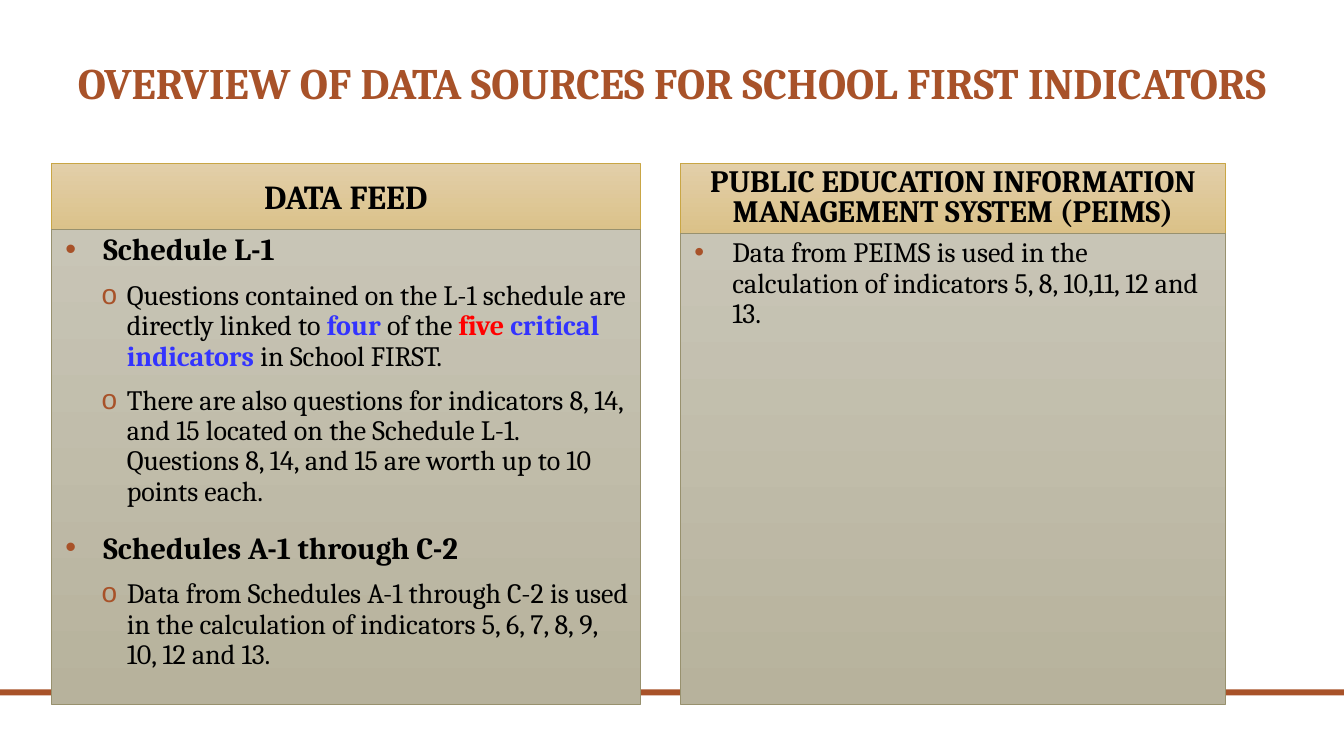
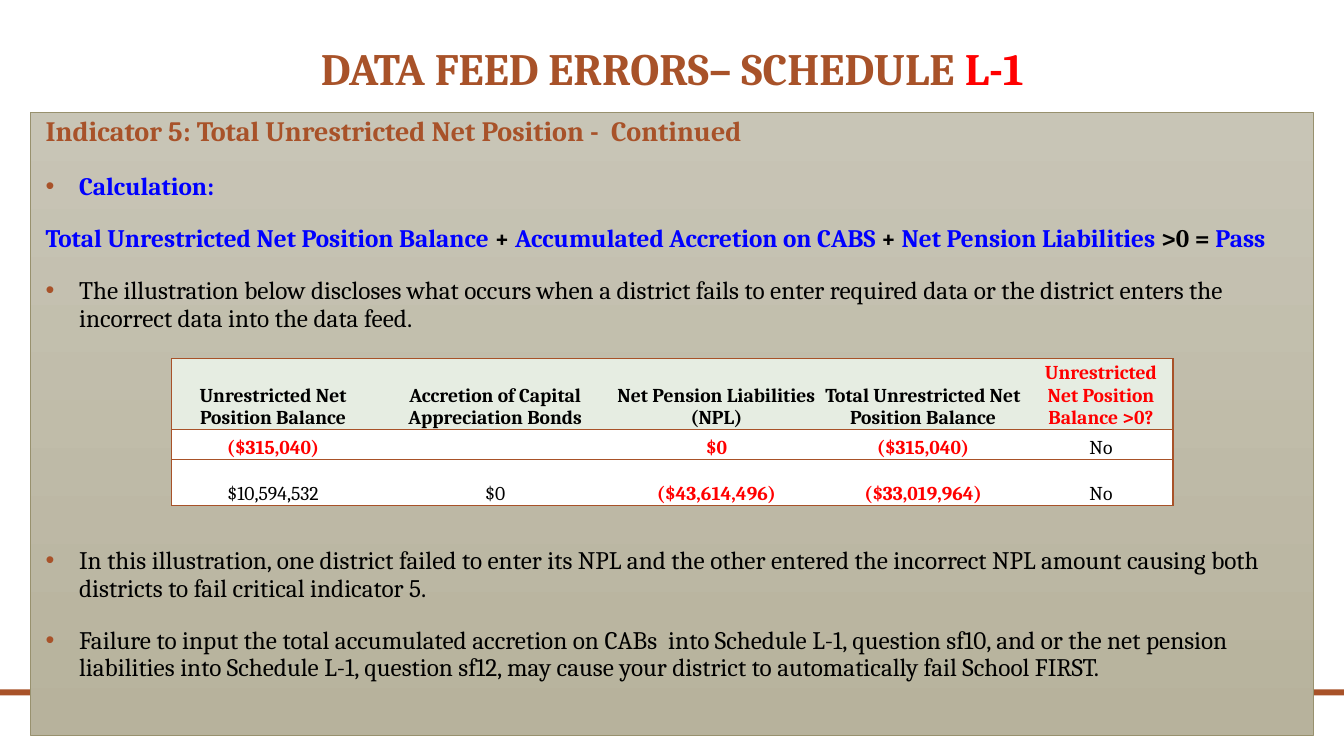
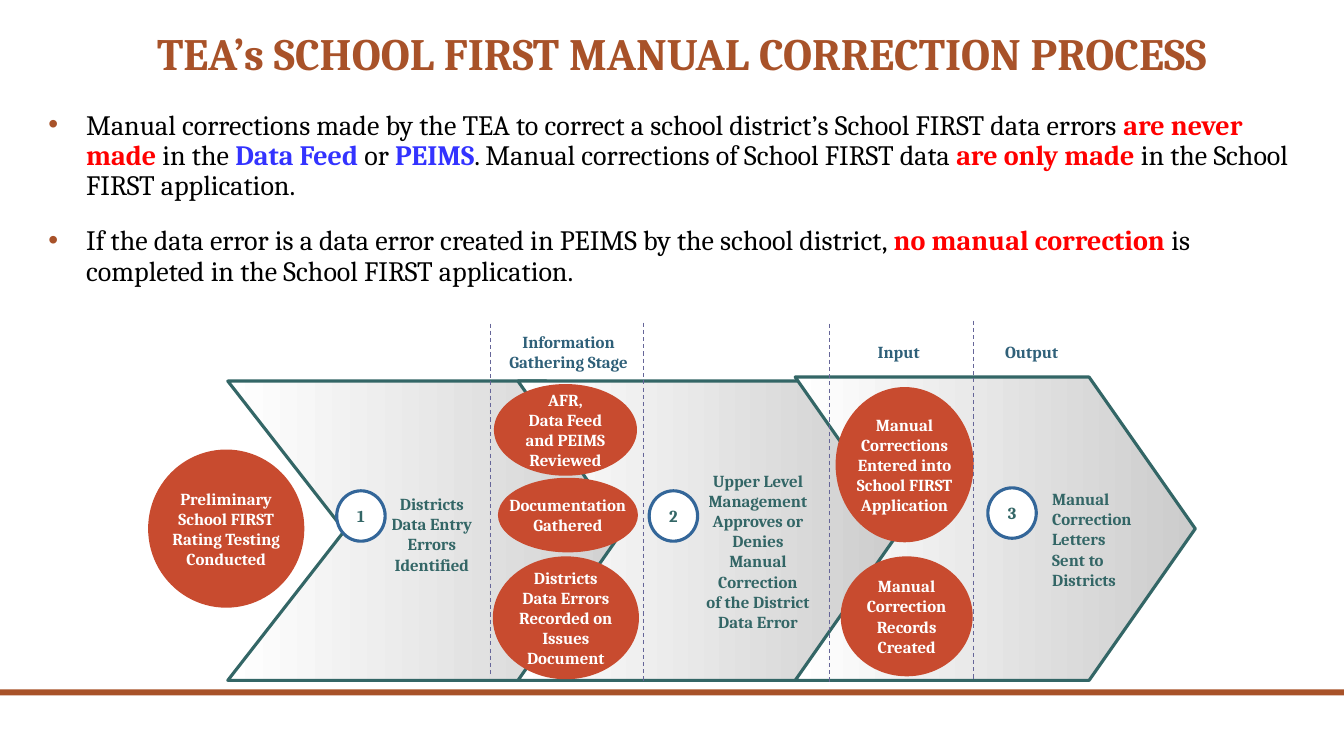
from dataclasses import dataclass

from lxml import etree
from pptx import Presentation
from pptx.dml.color import RGBColor
from pptx.enum.dml import MSO_LINE
from pptx.enum.shapes import MSO_CONNECTOR, MSO_SHAPE as SHAPE
from pptx.enum.text import MSO_ANCHOR as ANCHOR, PP_ALIGN as ALIGN
from pptx.oxml.ns import qn
from pptx.util import Pt

FONT = "Cambria"
RUST, RED, BLUE, PURE_BLUE = "A85229", "FF0000", "3333FF", "0000FF"
BLACK, WHITE, TEAL, STEEL = "000000", "FFFFFF", "336666", "2F6079"
ORANGE, RING, DASHED, HEAD_ROW = "C84B2F", "336699", "666699", "E6EDE2"
TAN, TAN_LINE = ("E2CFA9", "DBC188"), "C9A645"
STONE, STONE_LINE = ("C8C5B6", "B7B29C"), "98916E"
SILVER = ("FFFFFF", "CCCCCC")
DOWN, ACROSS = 270, 0


def rgb(color):
    return RGBColor.from_string(color)


def sub(parent, tag, **attributes):
    return etree.SubElement(parent, qn(tag), attributes)


@dataclass
class Para:
    """A paragraph; a run is plain text or a bold (text, color) pair."""
    runs: list
    size: float = 20
    bold: bool = False
    color: str = BLACK
    bullet: str = "•"
    left: float = 30
    hang: float = 27
    before: float = 18
    spacing: float = 0.9
    align: ALIGN = ALIGN.LEFT


def centred(*runs, size, color=BLACK, spacing=0.9):
    return Para(list(runs), size, True, color, "", 0, 0, 0, spacing, ALIGN.CENTER)


def sub_point(*runs):
    return Para(list(runs), bullet="o", left=46.8, hang=18, before=10)


def note(*runs, **style):
    return Para(list(runs), **{"size": 18, "left": 27.4, "hang": 23.8, **style})


class Deck:
    def __init__(self):
        self.prs = Presentation()
        self.prs.slide_width, self.prs.slide_height = Pt(960), Pt(540)
        self.shapes = None

    def new_slide(self, box, *title, size=32, anchor=ANCHOR.MIDDLE):
        self.shapes = self.prs.slides.add_slide(self.prs.slide_layouts[6]).shapes
        self.shape(SHAPE.RECTANGLE, (0, 492.5, 960, 4.3), RUST)
        self.text(box, [centred(*title, size=size, color=RUST)], anchor)

    def shape(self, kind, box, fill, line=None, width=0.5, angle=DOWN):
        """Draw a preset shape; a pair of fill colors makes a gradient."""
        shape = self.shapes.add_shape(kind, *map(Pt, box))
        shape.shadow.inherit = False
        if isinstance(fill, tuple):
            shape.fill.gradient()
            shape.fill.gradient_angle = angle
            for stop, color, position in zip(shape.fill.gradient_stops, fill, (0, 1)):
                stop.color.rgb, stop.position = rgb(color), position
        else:
            shape.fill.solid()
            shape.fill.fore_color.rgb = rgb(fill)
        if line:
            shape.line.color.rgb, shape.line.width = rgb(line), Pt(width)
        else:
            shape.line.fill.background()
        return shape

    def fill_frame(self, frame, paras, anchor):
        frame.word_wrap, frame.vertical_anchor = True, anchor
        for i, para in enumerate(paras):
            paragraph = frame.add_paragraph() if i else frame.paragraphs[0]
            paragraph.alignment, paragraph.line_spacing = para.align, para.spacing
            paragraph.space_before = Pt(para.before if i else 0)
            props = paragraph._p.get_or_add_pPr()
            props.set("marL", str(Pt(para.left)))
            props.set("indent", str(Pt(-para.hang)))
            if para.bullet:
                sub(sub(props, "a:buClr"), "a:srgbClr", val=RUST)
                sub(props, "a:buFont", typeface="Arial")
                sub(props, "a:buChar", char=para.bullet)
            for item in para.runs:
                plain = isinstance(item, str)
                words, color = (item, para.color) if plain else item
                run = paragraph.add_run()
                run.text = words
                self.style(run.font, para.size, color, para.bold or not plain)

    def style(self, font, size, color, bold=True):
        font.name, font.size, font.bold = FONT, Pt(size), bold
        font.color.rgb = rgb(color)

    def text(self, box, paras, anchor=ANCHOR.TOP):
        self.fill_frame(self.shapes.add_textbox(*map(Pt, box)).text_frame, paras, anchor)

    def panel(self, box, paras, fill=STONE, line=STONE_LINE, anchor=ANCHOR.TOP):
        panel = self.shape(SHAPE.RECTANGLE, box, fill, line)
        self.fill_frame(panel.text_frame, paras, anchor)

    def small_text(self, frame, words, color, align, wrap, anchor):
        frame.text, frame.word_wrap, frame.vertical_anchor = words, wrap, anchor
        for paragraph in frame.paragraphs:
            paragraph.alignment = align
            for run in paragraph.runs:
                self.style(run.font, 12, color)

    def label(self, box, words, color=TEAL, align=ALIGN.CENTER, anchor=ANCHOR.TOP):
        frame = self.shapes.add_textbox(*map(Pt, box)).text_frame
        self.small_text(frame, words, color, align, True, anchor)

    def bubble(self, box, words, fill=ORANGE, line=None, color=WHITE):
        bubble = self.shape(SHAPE.OVAL, box, fill, line, 2.25)
        self.small_text(bubble.text_frame, words, color, ALIGN.CENTER, False, ANCHOR.MIDDLE)

    def chevron(self, box, point):
        chevron = self.shape(SHAPE.CHEVRON, box, SILVER, TEAL, 2.25, ACROSS)
        chevron.adjustments[0] = point

    def divider(self, x, top, bottom):
        line = self.shapes.add_connector(
            MSO_CONNECTOR.STRAIGHT, Pt(x), Pt(top), Pt(x), Pt(bottom))
        line.line.color.rgb, line.line.width = rgb(DASHED), Pt(0.75)
        line.line.dash_style = MSO_LINE.DASH
        sub(line._element.spPr, "a:effectLst")

    def borders(self, cell, visible):
        props = cell._tc.get_or_add_tcPr()
        for side in "LRTB":
            edge = sub(props, f"a:ln{side}", w=str(Pt(1)))
            if side in visible:
                sub(sub(edge, "a:solidFill"), "a:srgbClr", val=RUST)
            else:
                sub(edge, "a:noFill")

    def table(self, left, top, widths, heights, rows, red_cells):
        table = self.shapes.add_table(
            len(rows), len(widths), Pt(left), Pt(top),
            Pt(sum(widths)), Pt(sum(heights))).table
        for column, width in zip(table.columns, widths):
            column.width = Pt(width)
        for r, (row, height) in enumerate(zip(rows, heights)):
            table.rows[r].height = Pt(height)
            for c, words in enumerate(row):
                cell = table.cell(r, c)
                sides = "TB" + "L" * (c == 0) + "R" * (c == len(row) - 1)
                self.borders(cell, sides)
                cell.fill.solid()
                cell.fill.fore_color.rgb = rgb(WHITE if r else HEAD_ROW)
                cell.margin_left = cell.margin_right = 0
                cell.margin_top = cell.margin_bottom = 0
                cell.vertical_anchor = ANCHOR.BOTTOM
                cell.text = words
                red = (r, c) in red_cells
                for paragraph in cell.text_frame.paragraphs:
                    paragraph.alignment = ALIGN.CENTER
                    for run in paragraph.runs:
                        self.style(run.font, 14, RED if red else BLACK, red or r == 0)


def data_sources(deck):
    deck.new_slide((25.2, 15.8, 909.4, 90),
                   "OVERVIEW OF DATA SOURCES FOR SCHOOL FIRST INDICATORS", size=31)
    feed = [
        Para(["Schedule L-1"], size=22, bold=True),
        sub_point("Questions contained on the L-1 schedule are directly linked to ",
                  ("four ", BLUE), "of the ", ("five ", RED),
                  ("critical indicators ", BLUE), "in School FIRST."),
        sub_point("There are also questions for indicators 8, 14, and 15 located on the "
                  "Schedule L-1. Questions 8, 14, and 15 are worth up to 10 points each."),
        Para(["Schedules A-1 through C-2"], size=22, bold=True),
        sub_point("Data from Schedules A-1 through C-2 is used in the calculation of "
                  "indicators 5, 6, 7, 8, 9, 10, 12 and 13."),
    ]
    peims = [Para(["Data from PEIMS is used in the calculation of indicators "
                   "5, 8, 10,11, 12 and 13."])]
    columns = [
        (36.7, 420.5, 163.8, feed, centred("DATA FEED", size=24)),
        (486, 389.5, 167, peims,
         centred("PUBLIC EDUCATION INFORMATION MANAGEMENT SYSTEM (PEIMS)",
                 size=22.2, spacing=0.8)),
    ]
    for left, width, top, body, heading in columns:
        deck.panel((left, 116.6, width, 50.4), [heading], TAN, TAN_LINE, ANCHOR.MIDDLE)
        deck.panel((left, top, width, 503 - top), body)


def feed_errors(deck):
    deck.new_slide((102.2, 30.2, 756, 90), "DATA FEED ERRORS– SCHEDULE ", ("L-1", RED),
                   anchor=ANCHOR.TOP)
    deck.panel((22, 80.6, 916, 445), [
        note("Indicator 5: Total Unrestricted Net Position -  Continued",
             size=20, bold=True, color=RUST, bullet="", left=3.6, hang=0),
        note(("Calculation:", PURE_BLUE)),
        note("Total Unrestricted Net Position Balance ", ("+ ", BLACK),
             "Accumulated Accretion on CABS ", ("+ ", BLACK),
             "Net Pension Liabilities ", (">0 = ", BLACK), "Pass",
             bold=True, color=PURE_BLUE, bullet=""),
        note("The illustration below discloses what occurs when a district fails to enter "
             "required data or the district enters the incorrect data into the data feed."),
        note("In this illustration, one district failed to enter its NPL and the other "
             "entered the incorrect NPL amount causing both districts to fail critical "
             "indicator 5.", before=154),
        note("Failure to input the total accumulated accretion on CABs  into Schedule L-1, "
             "question sf10, and or the net pension liabilities into Schedule L-1, question "
             "sf12, may cause your district to automatically fail School FIRST."),
    ])
    deck.table(122.4, 256.3, (145.4, 172, 144, 151.2, 103), (48.5, 21.6, 32.4), [
        ("Unrestricted Net\nPosition Balance", "Accretion of Capital Appreciation Bonds",
         "Net Pension Liabilities\n(NPL)", "Total Unrestricted Net Position Balance",
         "Unrestricted Net Position Balance >0?"),
        ("($315,040)", "", "$0", "($315,040)", "No"),
        ("$10,594,532", "$0", "($43,614,496)", "($33,019,964)", "No"),
    ], {(0, 4), (1, 0), (1, 2), (1, 3), (2, 2), (2, 3)})


def correction_process(deck):
    deck.new_slide((30.2, 12.2, 914.4, 55.4),
                   "TEA’s SCHOOL FIRST MANUAL CORRECTION PROCESS")
    deck.text((24.5, 75.6, 919.4, 447), [
        Para(["Manual corrections made by the TEA to correct a school district’s School "
              "FIRST data errors ", ("are never made ", RED), "in the ",
              ("Data Feed ", BLUE), "or ", ("PEIMS", BLUE),
              ". Manual corrections of School FIRST data ", ("are only made ", RED),
              "in the School FIRST application."]),
        Para(["If the data error is a data error created in PEIMS by the school district, ",
              ("no manual correction", RED),
              " is completed in the School FIRST application."]),
    ])
    for left, top, width, point in ((162.7, 272.2, 311, 0.39), (370, 272.2, 276.5, 0.35),
                                    (568, 269.3, 285.8, 0.35)):
        deck.chevron((left, top, width, 486 - top), point)
    for number, (left, top) in enumerate(((240.5, 350.6), (463.7, 350.6), (705.6, 348.5)), 1):
        deck.bubble((left, top, 34.6, 36), str(number), WHITE, RING, TEAL)

    deck.label((267.8, 349.2, 81.4, 65.5), "Districts Data Entry Errors Identified")
    deck.label((490.3, 332.6, 102.2, 132.5),
               "Upper Level\nManagement\nApproves or Denies\nManual Correction\n"
               "of the District\nData Error")
    deck.label((744.5, 345.6, 89.3, 85.7),
               "Manual\nCorrection Letters\nSent to Districts", align=ALIGN.LEFT)

    for box, words in (
        ((105.8, 321.1, 111.6, 113), "Preliminary\nSchool FIRST\nRating Testing\nConducted"),
        ((352.8, 274.3, 102.2, 65.5), "AFR,\nData Feed\nand PEIMS\nReviewed"),
        ((355.7, 341.3, 100, 53.3), "Documentation\nGathered"),
        ((352, 397.4, 104.4, 87.8),
         "Districts\nData Errors\nRecorded on\nIssues\nDocument"),
        ((596.9, 276.5, 98.6, 110.9),
         "Manual\nCorrections\nEntered into\nSchool FIRST\nApplication"),
        ((600.5, 397.4, 94.3, 85.7), "Manual\nCorrection\nRecords\nCreated"),
    ):
        deck.bubble(box, words)

    for left, width, words in ((352.8, 106.6, "Information Gathering Stage"),
                               (607.7, 68.4, "Input"), (702.7, 68.4, "Output")):
        deck.label((left, 230, width, 42.5), words, STEEL, anchor=ANCHOR.MIDDLE)
    for x, top, bottom in ((350.6, 231.1, 483.1), (459.4, 230.4, 486.7),
                           (592.6, 231.1, 487.4), (695.5, 229, 485.3)):
        deck.divider(x, top, bottom)


def main():
    deck = Deck()
    data_sources(deck)
    feed_errors(deck)
    correction_process(deck)
    deck.prs.save("out.pptx")


if __name__ == "__main__":
    main()
